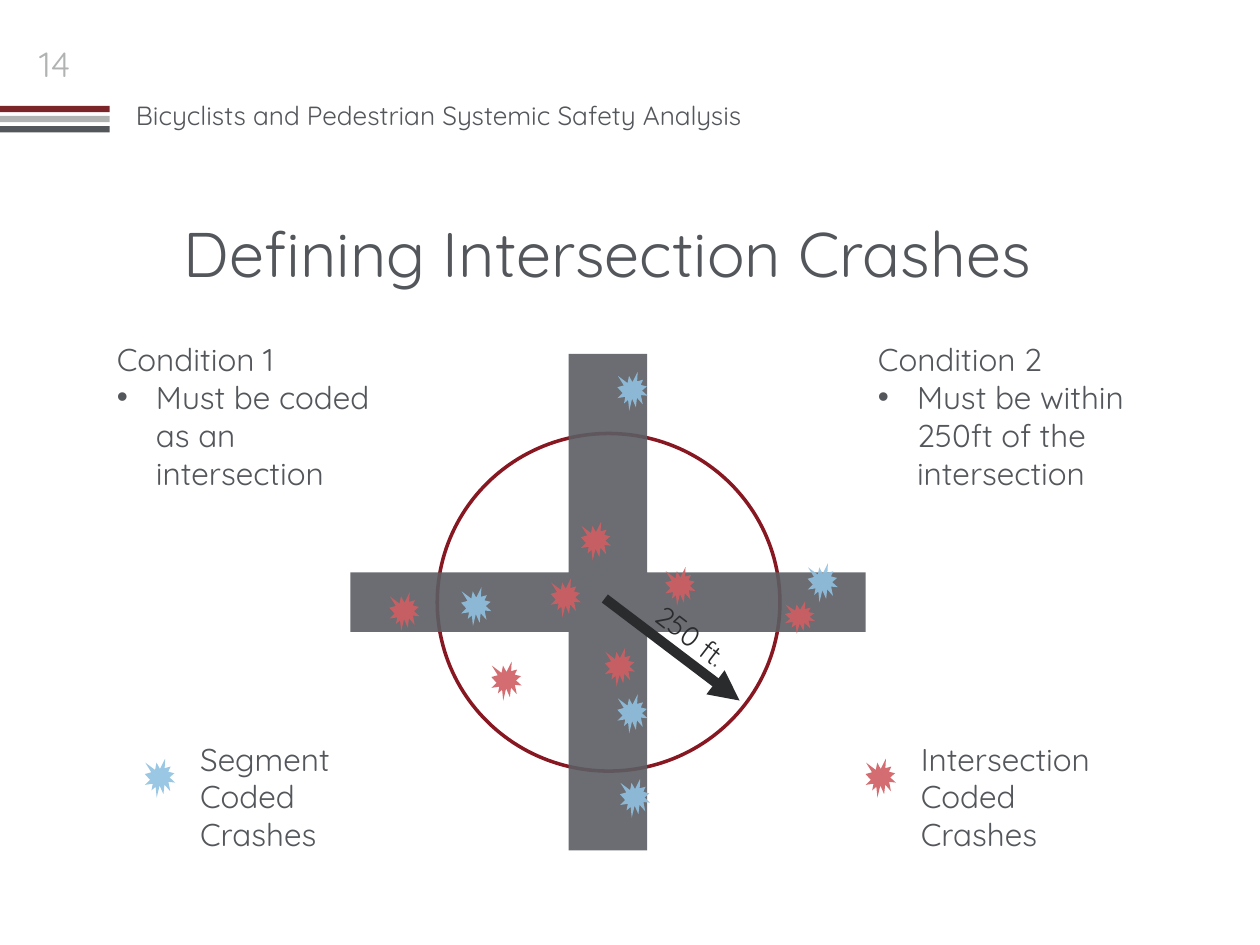
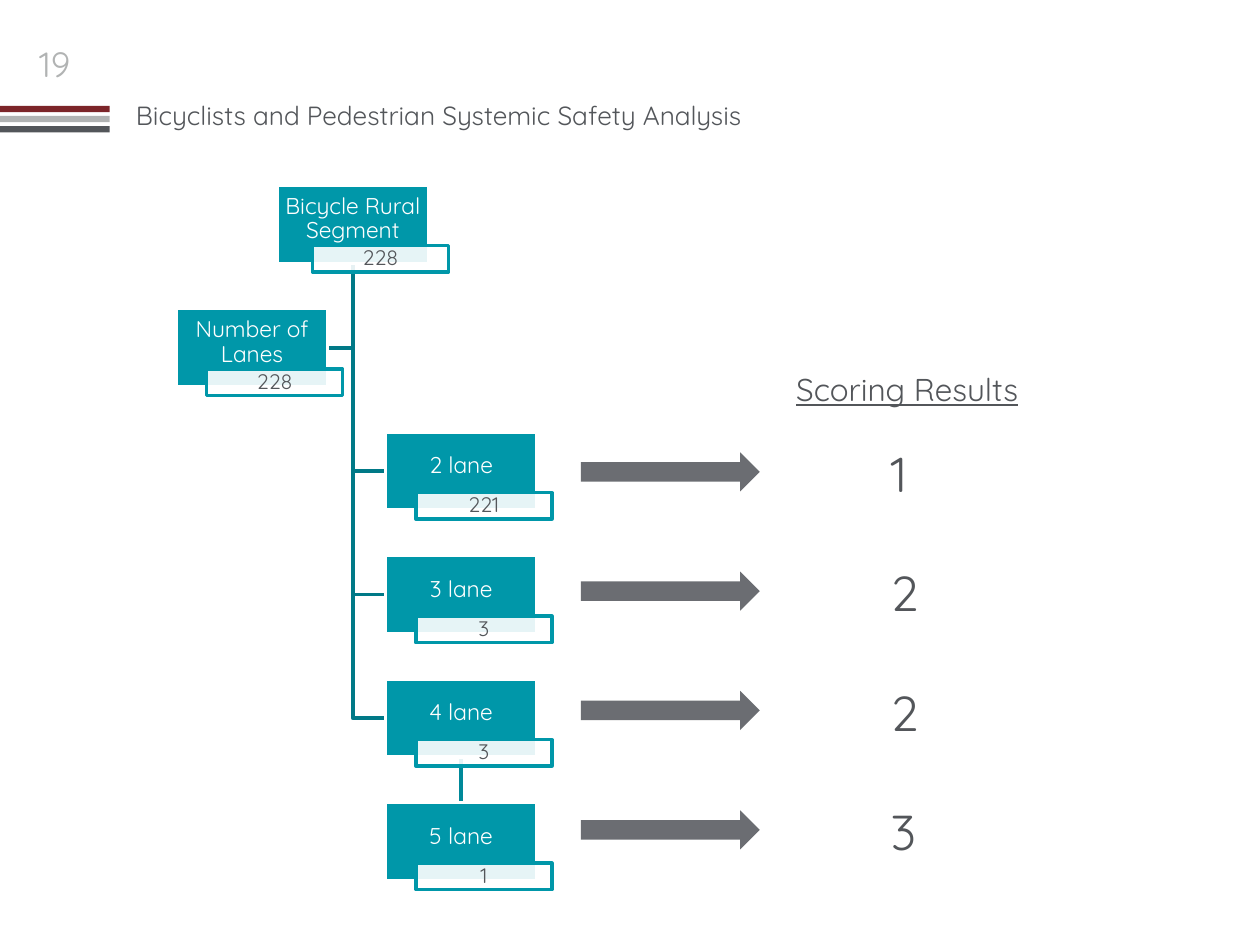
from pptx import Presentation
from pptx import util as u
from pptx.dml.color import RGBColor
from pptx.enum import shapes, text
from pptx.oxml import ns
from lxml import etree

WIDE, HIGH = u.Inches(10), u.Inches(7.5)
COL, ROW = WIDE / 10, HIGH / 7.5
FONT = "Quicksand"
INK, SILVER, WINE = "53565A", "B1B3B3", "7C2529"
ROAD, RING, COAL = "5B5E63", "871721", "2A2B2D"
RED, BLUE = "CF5E63", "90C1E0"
TEAL, DEEP, STEM, WHITE = "0097A9", "007987", "008999", "FFFFFF"
KIND = shapes.MSO_SHAPE
MID = text.PP_ALIGN.CENTER
PAD = (0.1, 0.05, 0.1, 0.05)


def tint(code):
    """Turn a hex string into a colour."""
    return RGBColor.from_string(code)


def place(box, x, y, w, h):
    """Give a part's slide position from columns and rows inside a box."""
    return [int(n) for n in ((box[0] + x) * COL, (box[1] + y) * ROW, w * COL, h * ROW)]


def node(parent, tag, **attrs):
    """Append a drawing element."""
    item = etree.SubElement(parent, ns.qn(tag))
    for key, value in attrs.items():
        item.set(key, value)
    return item


def stroke(line, color, width):
    """Set a line's colour and weight."""
    line.color.rgb = tint(color)
    line.width = u.Pt(width)


def draw(slide, kind, spot, fill=None, line=None, clear=False):
    """Add a preset shape, optionally a little see-through."""
    shape = slide.shapes.add_shape(kind, *spot)
    shape.shadow.inherit = False
    if fill:
        shape.fill.solid()
        shape.fill.fore_color.rgb = tint(fill)
        if clear:
            color = shape.fill._xPr.find(ns.qn("a:solidFill"))[0]
            node(color, "a:alpha", val="90000")
    else:
        shape.fill.background()
    if line:
        stroke(shape.line, line, 2)
    else:
        shape.line.fill.background()
    return shape


def link(slide, start, end, color, width, head=False):
    """Add a straight line between two points, with an optional arrowhead."""
    ends = [int(n) for n in (start[0] * COL, start[1] * ROW, end[0] * COL, end[1] * ROW)]
    line = slide.shapes.add_connector(shapes.MSO_CONNECTOR.STRAIGHT, *ends)
    stroke(line.line, color, width)
    props = line._element.spPr
    if head:
        node(props.find(ns.qn("a:ln")), "a:tailEnd", type="triangle")
    node(props, "a:effectLst")


def write(slide, spot, lines, size, color=INK, align=None, middle=False, pad=PAD, bullet=False):
    """Add a text box; with bullet, every line after the first is a point."""
    box = slide.shapes.add_textbox(*spot)
    frame = box.text_frame
    frame.word_wrap = True
    frame.margin_left, frame.margin_top, frame.margin_right, frame.margin_bottom = map(u.Inches, pad)
    if middle:
        frame.vertical_anchor = text.MSO_ANCHOR.MIDDLE
    frame.text = "\n".join(lines)
    for i, para in enumerate(frame.paragraphs):
        if bullet and i:
            props = para._p.get_or_add_pPr()
            props.set("marL", str(u.Inches(0.31)))
            props.set("indent", str(-u.Inches(0.31)))
            node(props, "a:buFont", typeface="Arial")
            node(props, "a:buChar", char="•")
        if align:
            para.alignment = align
        para.font.name = FONT
        para.font.size = u.Pt(size)
        para.font.color.rgb = tint(color)
    return box


def banner(slide, number, box=(0, 0.29)):
    """Add the page number, the three bands and the running title."""
    write(slide, place(box, 0.98, 0.45, 5.75, 0.35), ["Bicyclists and Pedestrian Systemic Safety Analysis"], 15)
    for i, color in enumerate((WINE, SILVER, INK)):
        draw(slide, KIND.RECTANGLE, place(box, 0, 0.55 + i * 0.08, 0.87, 0.05), color)
    write(slide, place(box, 0, 0, 0.87, 0.44), [number], 20, SILVER, MID)


def burst(slide, box, x, y, color, high=0.31):
    """Mark one crash."""
    draw(slide, KIND.EXPLOSION1, place(box, x, y, 0.24, high), color, clear=True)


def crossing(slide, box):
    """Draw the roads, the radius and the crashes around them."""
    draw(slide, KIND.OVAL, place(box, 0.69, 0.63, 2.72, 2.68), line=RING)
    road = draw(slide, KIND.CROSS, place(box, 0, 0, 4.09, 3.94), ROAD, clear=True)
    road.adjustments[0] = 0.44
    for x, y in ((1.59, 1.78), (1.83, 1.33), (2.5, 1.69), (2.02, 2.33), (1.12, 2.44), (0.31, 1.89)):
        burst(slide, box, x, y, RED)
    burst(slide, box, 3.45, 1.96, RED, 0.26)
    for x, y in ((3.63, 1.66), (2.14, 3.37), (2.12, 0.14), (0.88, 1.85), (2.12, 2.7)):
        burst(slide, box, x, y, BLUE)
    left, top = box
    link(slide, (left + 2.02, top + 1.94), (left + 3.09, top + 2.75), COAL, 5.75, True)
    radius = write(slide, place(box, 2.27, 2.11, 1.02, 0.37), ["250 ft"], 16, COAL)
    radius.rotation = 37.6
    dot = radius.text_frame.paragraphs[0].add_run()
    dot.text = "."
    dot.font.color.rgb = tint(INK)


def legend(slide, box, color, lines):
    """Explain one crash colour."""
    burst(slide, box, 0, 0.2, color)
    write(slide, place(box, 0.34, 0, 1.71, 1.01), lines, 18)


def rule(slide, box, lines):
    """Name a condition and its point."""
    write(slide, place(box, 0, 0, 2.26, 1.31), lines, 18, bullet=True)


def card(slide, box, name, count, shift=0.24):
    """Draw a tree card with its count tab."""
    spot, tab = place(box, 0, 0, 1.2, 0.62), place(box, shift, 0.48, 1.08, 0.21)
    draw(slide, KIND.RECTANGLE, spot, TEAL, WHITE)
    label = write(slide, spot, [name], 13, WHITE, MID, True, (0.01, 0.01, 0.01, 0.09))
    draw(slide, KIND.RECTANGLE, tab, WHITE, TEAL, True)
    tally = write(slide, tab, [count], 12, INK, MID, True, (0.03, 0.01, 0.03, 0.01))
    for item in (label, tally):
        item.text_frame.paragraphs[0].line_spacing = 0.9


def elbow(slide, start, end):
    """Run a line down from start, then across to end."""
    pen = slide.shapes.build_freeform(int(start[0] * COL), int(start[1] * ROW))
    bends = (start[0], end[1]), end
    pen.add_line_segments([(int(x * COL), int(y * ROW)) for x, y in bends], close=False)
    path = pen.convert_to_shape()
    path.shadow.inherit = False
    path.fill.background()
    stroke(path.line, DEEP, 2)


def tree(slide, box):
    """Draw the segment tree on rows of equal pitch."""
    left, top = box
    step, tall, lane = 0.98, 0.62, 1.66
    root = left + 1.4, top + tall
    elbow(slide, root, (left + 1.2, top + step + tall / 2))
    for i in (4, 3, 2):
        elbow(slide, root, (left + lane, top + i * step + tall / 2))
    stem = left + lane + 0.6
    link(slide, (stem, top + 4 * step + tall), (stem, top + 5 * step), STEM, 2)
    card(slide, (left + 0.8, top), "Bicycle Rural Segment", "228", 0.28)
    card(slide, (left, top + step), "Number of Lanes", "228")
    for i, (name, count) in enumerate((("2 lane", "221"), ("3 lane", "3"), ("4 lane", "3"), ("5 lane", "1")), 2):
        card(slide, (left + lane, top + i * step), name, count)


def scores(slide, box):
    """List the scores, each led by an arrow."""
    head = write(slide, place(box, 1.61, 0, 2, 0.4), ["Scoring Results"], 18)
    head.text_frame.paragraphs[0].font.underline = True
    for i, score in enumerate("1223"):
        y = 0.58 + i * 0.947
        draw(slide, KIND.RIGHT_ARROW, place(box, 0, y + 0.12, 1.42, 0.31), ROAD, clear=True)
        write(slide, place(box, 2.36, y, 0.47, 0.57), [score], 28)


def main():
    """Build both slides."""
    deck = Presentation()
    deck.slide_width, deck.slide_height = WIDE, HIGH
    crash, lanes = (deck.slides.add_slide(deck.slide_layouts[6]) for _ in range(2))
    banner(crash, "14")
    write(crash, place((0.51, 1.47), 0, 0, 8.62, 1.06), ["Defining Intersection Crashes"], 36, align=MID, middle=True)
    crossing(crash, (2.78, 2.81))
    legend(crash, (1.15, 5.82), BLUE, ["Segment", "Coded Crashes"])
    legend(crash, (6.87, 5.82), RED, ["Intersection Coded Crashes"])
    rule(crash, (0.83, 2.65), ["Condition 1", "Must be coded as an intersection"])
    rule(crash, (6.87, 2.65), ["Condition 2", "Must be within 250ft of the intersection"])
    banner(lanes, "19")
    tree(lanes, (1.4, 1.47))
    scores(lanes, (4.61, 2.89))
    deck.save("out.pptx")


if __name__ == "__main__":
    main()
